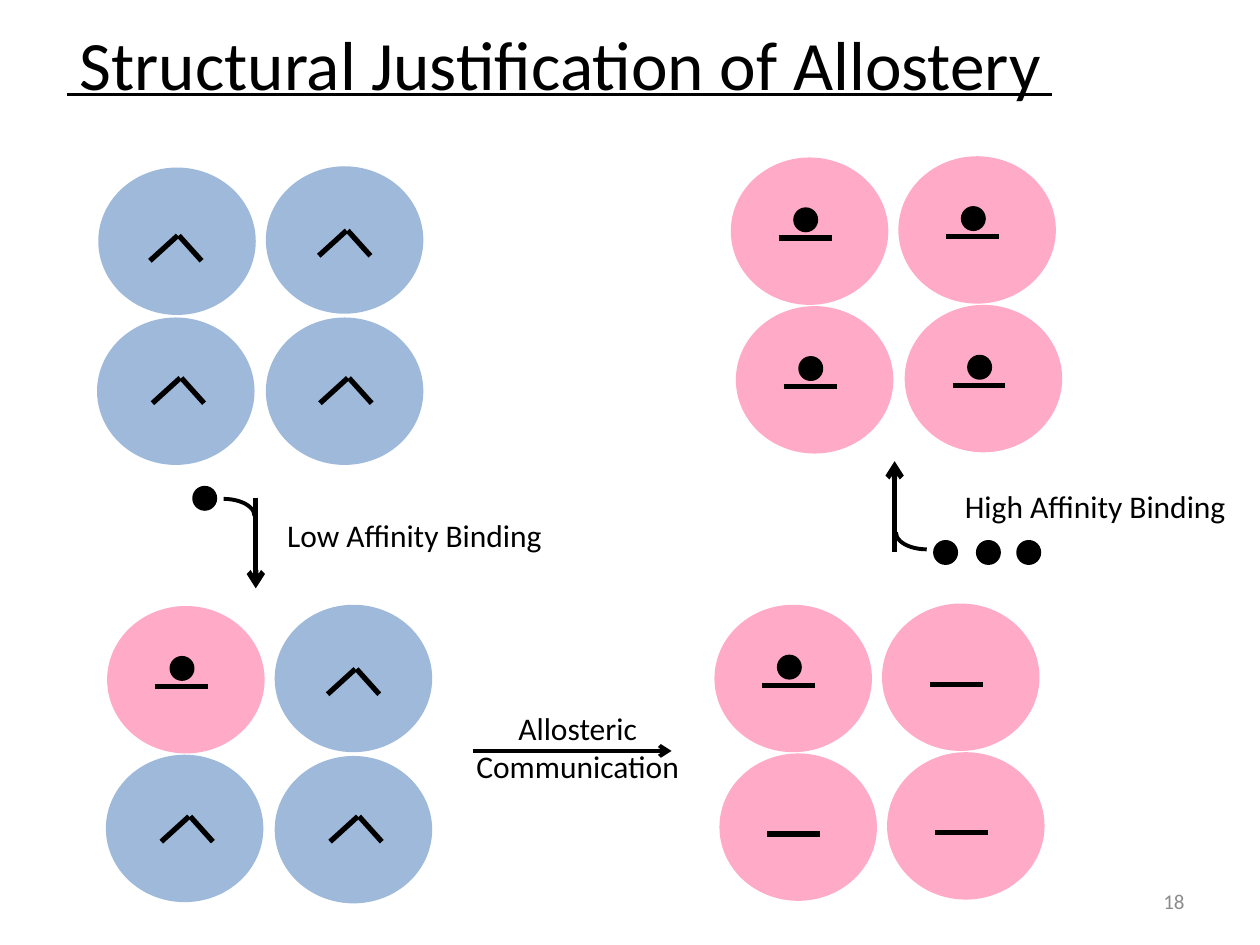
from lxml import etree
from pptx import Presentation
from pptx import util as u
from pptx.dml.color import RGBColor
from pptx.enum import shapes, text
from pptx.oxml.ns import qn

BLACK = "000000"
BLUE = "4F81BD"
PINK = "FF6699"
CELL_SIZE = (1.25, 1.17)
DOT_SIZE = 0.17

TENSE_CELLS = [
    (0.78, 1.33, 0.41, 0.54), (2.11, 1.32, 0.42, 0.51),
    (0.77, 2.52, 0.44, 0.48), (2.11, 2.52, 0.43, 0.48),
    (2.18, 4.8, 0.42, 0.51),
    (0.84, 5.99, 0.44, 0.49), (2.18, 6, 0.44, 0.48),
]
BOUND_CELLS = [
    (0.85, 4.81), (5.67, 4.8),
    (5.8, 1.25), (7.13, 1.24), (5.84, 2.43), (7.18, 2.42),
]
EMPTY_RELAXED_CELLS = [(7, 4.79), (5.71, 5.98), (7.04, 5.97)]
FREE_LIGANDS = [(1.54, 3.87), (7.42, 4.3), (7.76, 4.3), (8.08, 4.3)]


def paint(colour_format, value):
    colour_format.rgb = RGBColor.from_string(value)


def add_ellipse(page, left, top, width, height, colour, opacity=100):
    ellipse = page.shapes.add_shape(
        shapes.MSO_SHAPE.OVAL, u.Inches(left), u.Inches(top), u.Inches(width), u.Inches(height))
    ellipse.shadow.inherit = False
    ellipse.fill.solid()
    paint(ellipse.fill.fore_color, colour)
    ellipse.line.fill.background()
    if opacity < 100:
        colour_node = ellipse.fill._xPr.find(qn("a:solidFill"))[0]
        etree.SubElement(colour_node, qn("a:alpha"), val=str(opacity * 1000))
    return ellipse


def add_line(page, start, end, width=3, arrow=False):
    line = page.shapes.add_connector(
        shapes.MSO_CONNECTOR.STRAIGHT, *(u.Inches(value) for value in (*start, *end)))
    paint(line.line.color, BLACK)
    line.line.width = u.Pt(width)
    if arrow:
        etree.SubElement(line.line._get_or_add_ln(), qn("a:tailEnd"), type="arrow")
    etree.SubElement(line._element.spPr, qn("a:effectLst"))


def add_arc(page, left, top, rotation=0):
    arc = page.shapes.add_shape(
        shapes.MSO_SHAPE.ARC, u.Inches(left), u.Inches(top), u.Inches(0.49), u.Inches(0.27))
    arc.shadow.inherit = False
    arc.rotation = rotation
    arc.fill.background()
    paint(arc.line.color, BLACK)
    arc.line.width = u.Pt(2.25)


def add_text(page, words, left, top, width, height, size=18, colour=BLACK,
             align=text.PP_ALIGN.LEFT, anchor=text.MSO_ANCHOR.TOP, wrap=False):
    box = page.shapes.add_textbox(
        u.Inches(left), u.Inches(top), u.Inches(width), u.Inches(height))
    frame = box.text_frame
    frame.word_wrap = wrap
    frame.vertical_anchor = anchor
    frame.text = words
    for para in frame.paragraphs:
        para.alignment = align
        for span in para.runs:
            span.font.name = "Calibri"
            span.font.size = u.Pt(size)
            paint(span.font.color, colour)


def add_ligand(page, left, top):
    dot = add_ellipse(page, left, top, DOT_SIZE, DOT_SIZE, BLACK)
    paint(dot.line.color, BLACK)
    dot.line.width = u.Pt(2)


def add_tense_cell(page, left, top, site_x, site_y):
    add_ellipse(page, left, top, *CELL_SIZE, BLUE, opacity=55)
    x, y = left + site_x, top + site_y
    add_line(page, (x, y + 0.2), (x + 0.22, y))
    add_line(page, (x + 0.23, y), (x + 0.41, y + 0.2))


def add_relaxed_cell(page, left, top, bound):
    add_ellipse(page, left, top, *CELL_SIZE, PINK, opacity=55)
    add_line(page, (left + 0.38, top + 0.64), (left + 0.8, top + 0.64))
    if bound:
        add_ligand(page, left + 0.51, top + 0.41)


def main():
    deck = Presentation()
    deck.slide_width, deck.slide_height = u.Inches(10), u.Inches(7.5)
    page = deck.slides.add_slide(deck.slide_layouts[6])
    centre, middle = text.PP_ALIGN.CENTER, text.MSO_ANCHOR.MIDDLE

    add_text(page, "Structural Justification of Allostery", 0.42, 0.28, 8.06, 0.43,
             size=39.6, align=centre, anchor=middle, wrap=True)
    add_line(page, (0.53, 0.75), (8.35, 0.75), width=1.5)
    add_text(page, "18", 7.17, 6.95, 2.33, 0.4, size=12, colour="8C8C8C",
             align=text.PP_ALIGN.RIGHT, anchor=middle, wrap=True)

    for cell in TENSE_CELLS:
        add_tense_cell(page, *cell)
    for cell in BOUND_CELLS:
        add_relaxed_cell(page, *cell, bound=True)
    for cell in EMPTY_RELAXED_CELLS:
        add_relaxed_cell(page, *cell, bound=False)
    for ligand in FREE_LIGANDS:
        add_ligand(page, *ligand)

    add_line(page, (2.03, 3.95), (2.03, 4.67), arrow=True)
    add_arc(page, 1.53, 3.96)
    add_text(page, "Low Affinity Binding", 2.18, 4.05, 2.25, 0.4)
    add_line(page, (7.1, 4.38), (7.1, 3.66), arrow=True)
    add_arc(page, 7.11, 4.09, rotation=180)
    add_text(page, "High Affinity Binding", 7.56, 3.82, 2.3, 0.4)
    add_line(page, (3.75, 5.96), (5.33, 5.96), width=2.25, arrow=True)
    add_text(page, "Allosteric\nCommunication", 3.67, 5.58, 1.83, 0.71, align=centre)

    deck.save("out.pptx")


if __name__ == "__main__":
    main()
